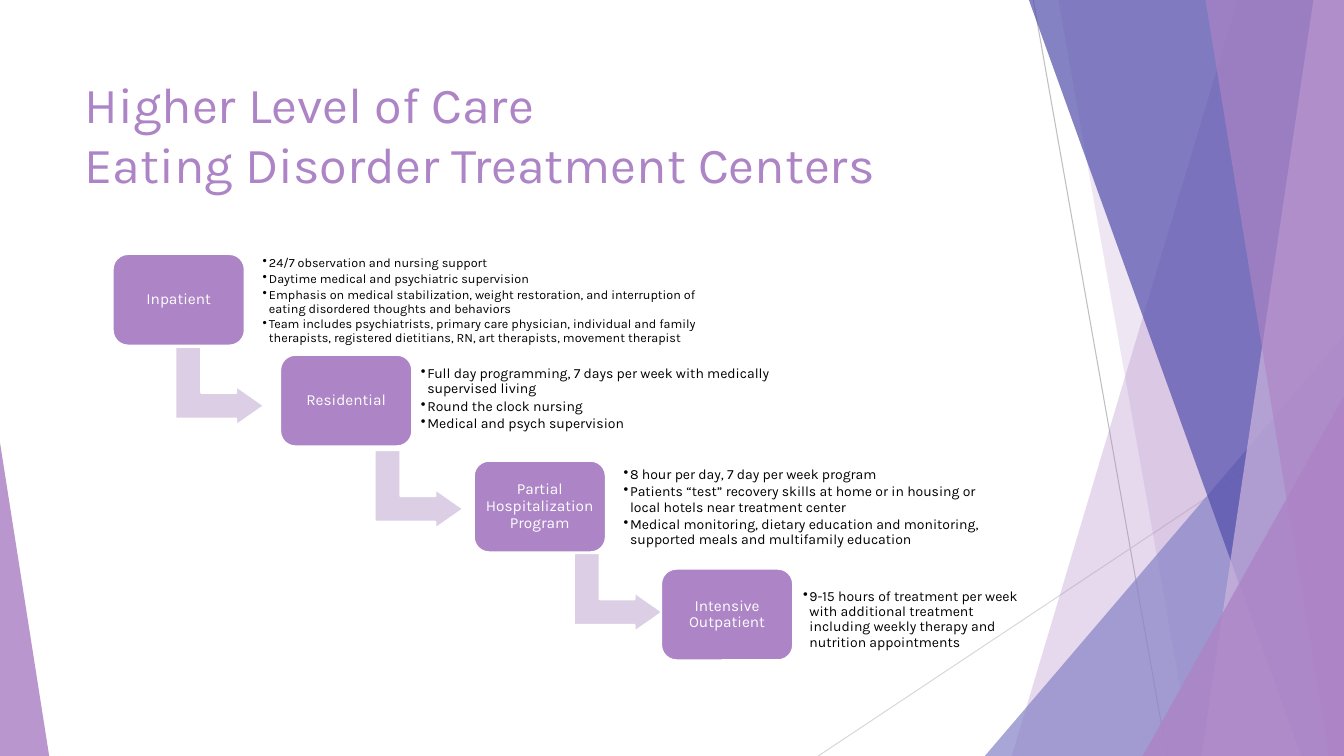
from typing import NamedTuple

from lxml.etree import SubElement
from pptx import Presentation
from pptx.dml.color import RGBColor
from pptx.enum.shapes import MSO_CONNECTOR as Connector
from pptx.enum.shapes import MSO_SHAPE as Preset
from pptx.enum.text import MSO_ANCHOR as Anchor
from pptx.enum.text import MSO_AUTO_SIZE as AutoSize
from pptx.enum.text import PP_ALIGN as Align
from pptx.oxml.ns import qn
from pptx.util import Cm, Pt

COLORS = {
    "purple": "AD84C6", "lilac": "CEB5DD", "arrow": "DBCEE5",
    "periwinkle": "8784C7", "indigo": "524EAB", "white": "FFFFFF",
    "black": "000000", "gray": "BFBFBF", "pale_gray": "D9D9D9",
}
FONT = "Karla"
WIDTH, HEIGHT = 33.87, 19.05


class Box(NamedTuple):
    left: float
    top: float
    width: float
    height: float

    def lengths(self):
        return [Cm(value) for value in self]


SLIDE = Box(0, 0, WIDTH, HEIGHT)
TITLE = Box(1.88, 1.70, 23.88, 3.66)
STAGE_SIZE = (3.33, 2.31)
ARROW_START = Box(4.55, 8.61, 1.98, 2.24)
ARROW_STEP = (5.02, 2.60)

STAGES = [
    ("Inpatient", (2.84, 6.40), Box(6.50, 6.38, 11.40, 2.41), 9, [
        "24/7 observation and nursing support",
        "Daytime medical and psychiatric supervision",
        "Emphasis on medical stabilization, weight restoration, and interruption of "
        "eating disordered thoughts and behaviors",
        "Team includes psychiatrists, primary care physician, individual and family "
        "therapists, registered dietitians, RN, art therapists, movement therapist",
    ]),
    ("Residential", (7.06, 8.94), Box(10.49, 9.12, 10.44, 1.88), 10, [
        "Full day programming, 7 days per week with medically supervised living",
        "Round the clock nursing",
        "Medical and psych supervision",
    ]),
    ("Partial Hospitalization Program", (11.94, 11.61), Box(15.60, 11.76, 9.55, 2.06), 10, [
        "8 hour per day, 7 day per week program",
        "Patients “test” recovery skills at home or in housing or local hotels "
        "near treatment center",
        "Medical monitoring, dietary education and monitoring, supported meals "
        "and multifamily education",
    ]),
    ("Intensive Outpatient", (16.66, 14.33), Box(20.12, 14.68, 5.84, 1.88), 10, [
        "9-15 hours of treatment per week with additional treatment including "
        "weekly therapy and nutrition appointments",
    ]),
]


def rgb(name):
    return RGBColor.from_string(COLORS[name])


def apply(target, values):
    for name, value in values.items():
        setattr(target, name, value)


def format_frame(frame, anchor, inset):
    apply(frame, {
        "word_wrap": True, "auto_size": AutoSize.NONE, "vertical_anchor": anchor,
        "margin_left": Cm(inset), "margin_right": Cm(inset),
        "margin_top": Cm(inset), "margin_bottom": Cm(inset),
    })


def format_paragraph(paragraph, size, color, **spacing):
    apply(paragraph, spacing)
    for run in paragraph.runs:
        apply(run.font, {"name": FONT, "size": Pt(size)})
        run.font.color.rgb = rgb(color)


def paint(shape, color, alpha=100, outline=None):
    shape.shadow.inherit = False
    shape.fill.solid()
    shape.fill.fore_color.rgb = rgb(color)
    if alpha < 100:
        tint = shape.fill._xPr.find(qn("a:solidFill"))[0]
        SubElement(tint, qn("a:alpha"), val=str(alpha * 1000))
    if outline:
        shape.line.color.rgb = rgb(outline)
        shape.line.width = Pt(1.5)
    else:
        shape.line.fill.background()


def add_ray(slide, start, end, color):
    ray = slide.shapes.add_connector(Connector.STRAIGHT, *map(Cm, start + end))
    ray.line.color.rgb = rgb(color)
    ray.line.width = Pt(0.75)
    SubElement(ray._element.spPr, qn("a:effectLst"))


def add_facet(slide, box, top_x, bottom_x, color, alpha):
    right, bottom = box.left + box.width, box.top + box.height
    corners = [(top_x, box.top), (right, box.top), (right, bottom), (bottom_x, bottom)]
    points = [(Cm(x), Cm(y)) for x, y in corners]
    outline = slide.shapes.build_freeform(*points[0])
    outline.add_line_segments(points[1:], close=True)
    paint(outline.convert_to_shape(), color, alpha)


def add_wedge(slide, box, left, top, width, apex, color, alpha):
    area = Box(left, top, width, box.top + box.height - top)
    wedge = slide.shapes.add_shape(Preset.ISOSCELES_TRIANGLE, *area.lengths())
    wedge.adjustments[0] = apex
    paint(wedge, color, alpha)


def add_backdrop(slide, box):
    right, bottom = box.left + box.width, box.top + box.height
    add_ray(slide, (26.04, box.top), (29.41, bottom), "gray")
    add_ray(slide, (right, 10.24), (20.62, bottom), "pale_gray")
    add_facet(slide, box, 31.19, 25.50, "purple", 30)
    add_facet(slide, box, 26.67, 30.05, "purple", 20)
    add_wedge(slide, box, 24.82, 8.46, right - 24.82, 1, "periwinkle", 72)
    add_facet(slide, box, 25.93, 32.79, "indigo", 70)
    add_facet(slide, box, 33.10, 30.28, "lilac", 70)
    add_facet(slide, box, 30.38, 33.48, "purple", 65)
    add_wedge(slide, box, 28.80, 9.98, right - 28.80, 1, "purple", 80)
    add_wedge(slide, box, box.left, 11.15, 1.24, 0, "purple", 85)


def add_title(slide, box):
    title = slide.shapes.title
    apply(title, dict(zip(("left", "top", "width", "height"), box.lengths())))
    frame = title.text_frame
    frame.text = "Higher Level of Care\vEating Disorder Treatment Centers"
    format_frame(frame, Anchor.TOP, 0.13)
    apply(frame, {"margin_left": Cm(0.25), "margin_right": Cm(0.25)})
    format_paragraph(frame.paragraphs[0], 36, "purple", alignment=Align.LEFT)


def add_step_arrow(slide, box):
    arrow = slide.shapes.add_shape(Preset.BENT_UP_ARROW, *box.lengths())
    arrow.rotation = 90
    for index, ratio in enumerate((0.328, 0.25, 0.358)):
        arrow.adjustments[index] = ratio
    paint(arrow, "arrow", outline="white")


def add_stage(slide, box, name):
    stage = slide.shapes.add_shape(Preset.ROUNDED_RECTANGLE, *box.lengths())
    paint(stage, "purple", outline="white")
    frame = stage.text_frame
    frame.text = name
    format_frame(frame, Anchor.MIDDLE, 0.13)
    format_paragraph(frame.paragraphs[0], 11, "white",
                     alignment=Align.CENTER, line_spacing=0.9)


def add_services(slide, box, services, size):
    frame = slide.shapes.add_textbox(*box.lengths()).text_frame
    frame.text = "\n".join(services)
    format_frame(frame, Anchor.MIDDLE, 0.12)
    for service in frame.paragraphs:
        format_paragraph(service, size, "black", alignment=Align.LEFT,
                         line_spacing=0.9, space_after=Pt(size * 0.18))
        properties = service._p.get_or_add_pPr()
        properties.set("marL", str(Cm(0.16)))
        properties.set("indent", str(-Cm(0.16)))
        SubElement(properties, qn("a:buChar"), char="•")


def add_staircase(slide):
    for index, (name, corner, services_box, size, services) in enumerate(STAGES):
        if index < len(STAGES) - 1:
            add_step_arrow(slide, ARROW_START._replace(
                left=ARROW_START.left + index * ARROW_STEP[0],
                top=ARROW_START.top + index * ARROW_STEP[1]))
        add_stage(slide, Box(*corner, *STAGE_SIZE), name)
        add_services(slide, services_box, services, size)


def main():
    deck = Presentation()
    apply(deck, {"slide_width": Cm(WIDTH), "slide_height": Cm(HEIGHT)})
    slide = deck.slides.add_slide(deck.slide_layouts[5])
    add_backdrop(slide, SLIDE)
    add_title(slide, TITLE)
    add_staircase(slide)
    deck.save("out.pptx")


if __name__ == "__main__":
    main()
